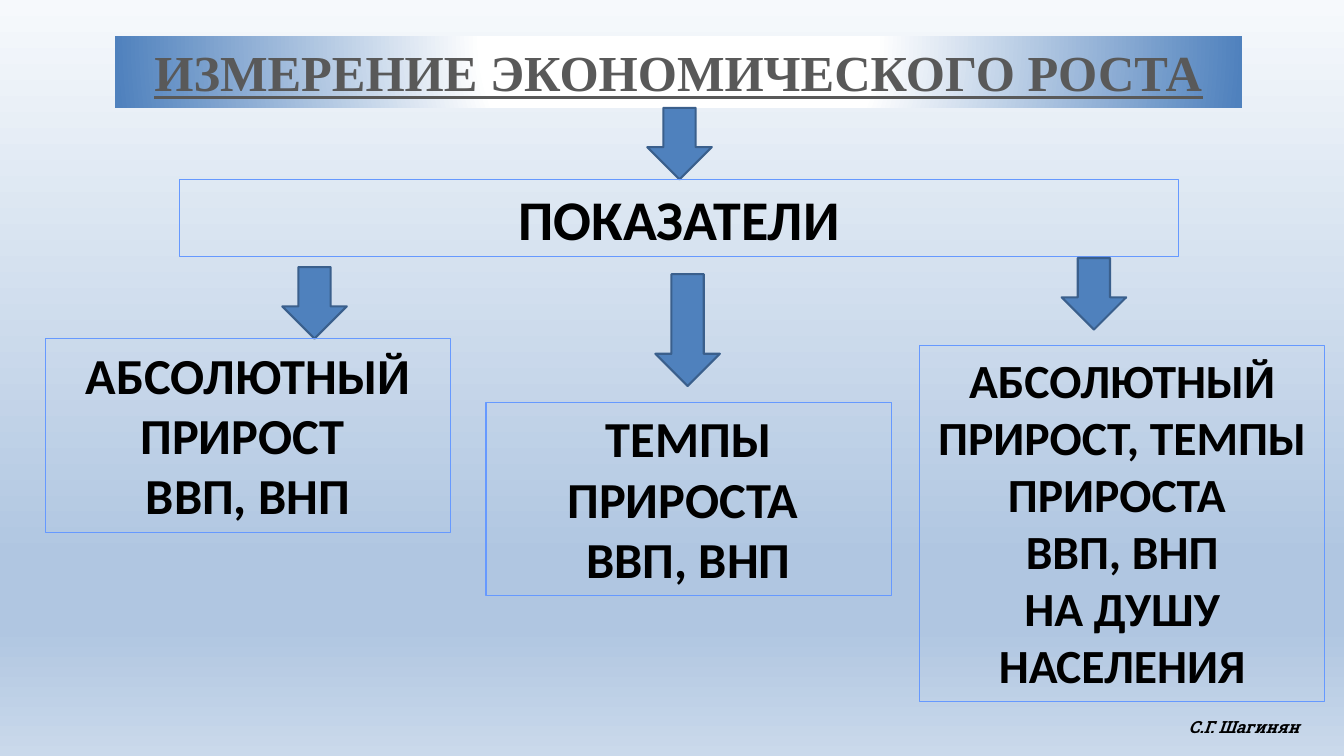
"""Build the slide on measuring economic growth."""
from lxml import etree
from pptx import Presentation
from pptx.dml.color import RGBColor
from pptx.enum.shapes import MSO_SHAPE as Shape
from pptx.enum.text import MSO_ANCHOR as Anchor, MSO_AUTO_SIZE as AutoSize, PP_ALIGN as Align
from pptx.oxml.ns import qn
from pptx.util import Inches, Pt


def color(hex_code):
    return RGBColor.from_string(hex_code)


def write_text(shape, text, size, font="Calibri", ink="000000", italic=False,
               underline=False, align=Align.CENTER, wrap=True):
    frame = shape.text_frame
    frame.word_wrap = wrap
    frame.auto_size = AutoSize.SHAPE_TO_FIT_TEXT
    frame.vertical_anchor = Anchor.TOP
    frame.text = text
    for paragraph in frame.paragraphs:
        paragraph.alignment = align
        for run in paragraph.runs:
            run.font.name = font
            run.font.size = Pt(size)
            run.font.bold = True
            run.font.italic = italic
            run.font.underline = underline
            run.font.color.rgb = color(ink)


def set_gradient(fill, owner, stops, circle=None):
    fill.gradient()
    gradient = next(owner.iter(qn("a:gradFill")))
    for child in list(gradient):
        gradient.remove(child)
    stop_list = etree.SubElement(gradient, qn("a:gsLst"))
    for percent, hex_code in stops:
        stop = etree.SubElement(stop_list, qn("a:gs"), pos=str(percent * 1000))
        etree.SubElement(stop, qn("a:srgbClr"), val=hex_code)
    if circle:
        center = etree.SubElement(gradient, qn("a:path"), path="circle")
        edges = {side: str(percent * 1000) for side, percent in zip("ltrb", circle)}
        etree.SubElement(center, qn("a:fillToRect"), **edges)
    else:
        etree.SubElement(gradient, qn("a:lin"), ang="5400000", scaled="0")


class GrowthSlide:
    """Hold the palette and the slide being drawn."""

    blue, arrow_edge, frame_edge = "4F81BD", "3A5F8C", "6699FF"

    def __init__(self, slide):
        self.slide = slide

    def background(self, stops):
        set_gradient(self.slide.background.fill, self.slide._element, stops)

    def add(self, kind, left, top, width, height):
        shape = self.slide.shapes.add_shape(
            kind, Inches(left), Inches(top), Inches(width), Inches(height))
        shape.shadow.inherit = False
        return shape

    def banner(self, text, *place):
        banner = self.add(Shape.RECTANGLE, *place)
        set_gradient(banner.fill, banner._element.spPr,
                     [(0, "FFFFFF"), (35, "FFFFFF"), (100, self.blue)],
                     circle=(50, -80, 50, 180))
        banner.line.fill.background()
        write_text(banner, text, 36, font="Times New Roman", ink="595959", underline=True)

    def box(self, text, size, *place):
        box = self.add(Shape.RECTANGLE, *place)
        box.fill.background()
        box.line.color.rgb = color(self.frame_edge)
        box.line.width = Pt(0.75)
        write_text(box, text, size)

    def arrow(self, left, top, height=0.71):
        arrow = self.add(Shape.DOWN_ARROW, left, top, 0.64, height)
        arrow.fill.solid()
        arrow.fill.fore_color.rgb = color(self.blue)
        arrow.line.color.rgb = color(self.arrow_edge)
        arrow.line.width = Pt(1.5)

    def signature(self, text, left, top, width, height):
        signature = self.slide.shapes.add_textbox(
            Inches(left), Inches(top), Inches(width), Inches(height))
        write_text(signature, text, 12, font="Roboto Slab", italic=True,
                   align=Align.LEFT, wrap=False)


def main():
    deck = Presentation()
    deck.slide_width, deck.slide_height = Inches(13.33), Inches(7.5)
    growth = GrowthSlide(deck.slides.add_slide(deck.slide_layouts[6]))

    growth.background([(0, "F6F9FC"), (74, "B0C6E1"), (83, "B0C6E1"), (100, "CAD9EB")])
    growth.banner("ИЗМЕРЕНИЕ ЭКОНОМИЧЕСКОГО РОСТА", 1.14, 0.36, 11.18, 0.71)
    growth.signature("С.Г. Шагинян", 11.69, 7.06, 1.44, 0.3)
    growth.arrow(6.42, 1.07)
    growth.box("ПОКАЗАТЕЛИ", 40, 1.78, 1.78, 9.91, 0.77)

    for left, top, height in [(2.8, 2.65, 0.71), (6.5, 2.72, 1.11), (10.53, 2.56, 0.71)]:
        growth.arrow(left, top, height)

    indicators = [
        ("АБСОЛЮТНЫЙ ПРИРОСТ \nВВП, ВНП", 36, 0.45, 3.36, 1.92),
        ("ТЕМПЫ ПРИРОСТА \nВВП, ВНП", 36, 4.82, 3.99, 1.92),
        ("АБСОЛЮТНЫЙ ПРИРОСТ, ТЕМПЫ ПРИРОСТА \nВВП, ВНП\nНА ДУШУ НАСЕЛЕНИЯ",
         34, 9.12, 3.43, 3.53),
    ]
    for text, size, left, top, height in indicators:
        growth.box(text, size, left, top, 4.02, height)

    deck.save("out.pptx")


if __name__ == "__main__":
    main()
